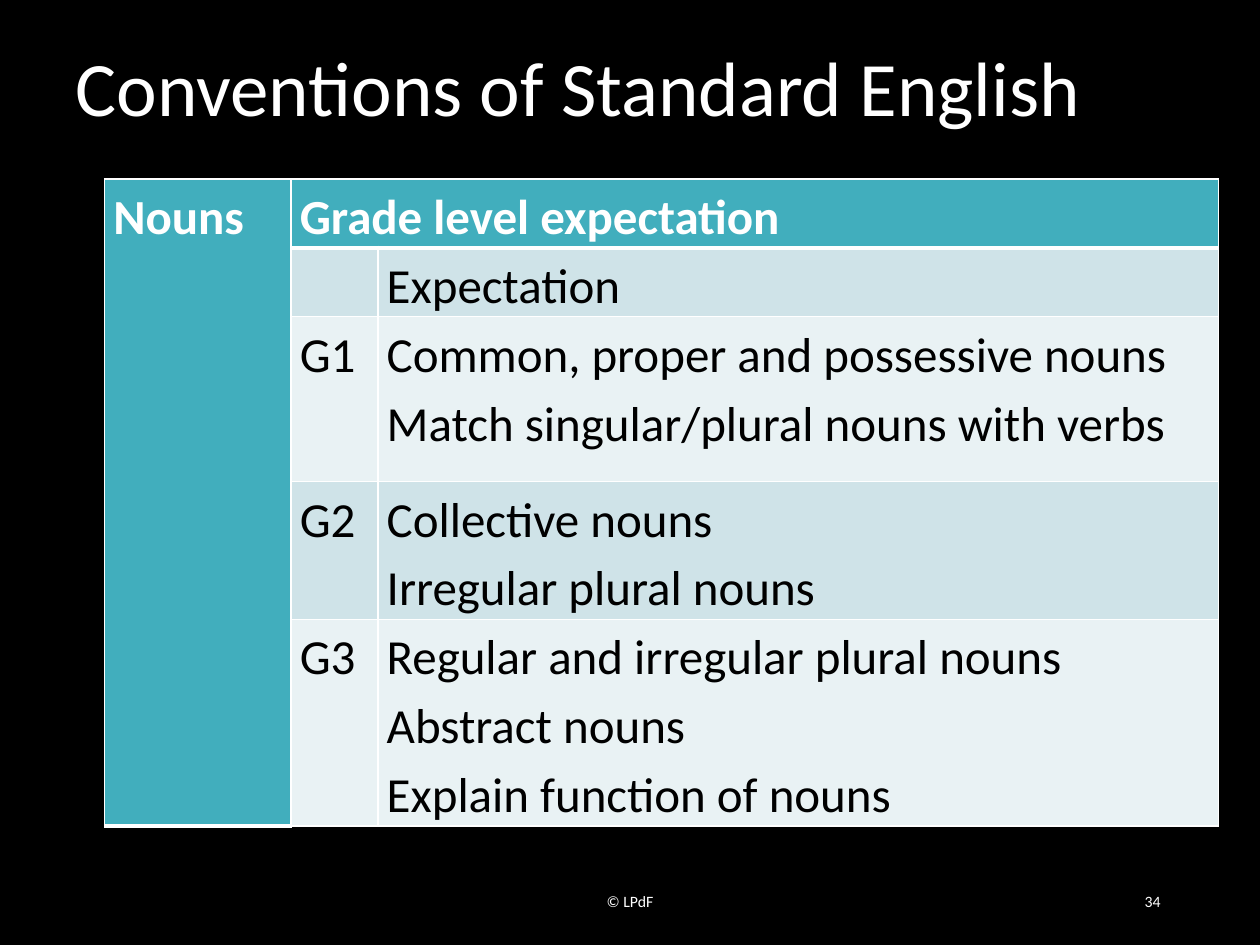
from pptx import Presentation
from pptx.dml.color import RGBColor
from pptx.enum.text import MSO_ANCHOR, PP_ALIGN
from pptx.oxml.ns import qn
from pptx.util import Inches, Pt
from lxml import etree

LEFT, CENTER, RIGHT = PP_ALIGN.LEFT, PP_ALIGN.CENTER, PP_ALIGN.RIGHT
MIDDLE = MSO_ANCHOR.MIDDLE

BLACK = RGBColor(0x00, 0x00, 0x00)
WHITE = RGBColor(0xFF, 0xFF, 0xFF)
TEAL = RGBColor(0x41, 0xAE, 0xBD)
BANDS = (RGBColor(0xE9, 0xF2, 0xF4), RGBColor(0xCF, 0xE3, 0xE8))

FONT = "Calibri"
COLUMN_WIDTHS = (1.48, 0.69, 6.67)
LINE_HEIGHT = 0.545
ROW_LINES = (1, 1, 2.4, 2, 3)
EXPECTATIONS = (
    ("", "Expectation"),
    ("G1", "Common, proper and possessive nouns\nMatch singular/plural nouns with verbs"),
    ("G2", "Collective nouns\nIrregular plural nouns"),
    ("G3", "Regular and irregular plural nouns\nAbstract nouns\nExplain function of nouns"),
)


def write_text(text_frame, text, size, color, bold=False, align=LEFT, spacing=1.0):
    text_frame.text = text
    for paragraph in text_frame.paragraphs:
        paragraph.alignment = align
        paragraph.line_spacing = spacing
        paragraph.font.name = FONT
        paragraph.font.size = Pt(size)
        paragraph.font.bold = bold
        paragraph.font.color.rgb = color


def set_borders(cell, top=1, bottom=1):
    """Draw white cell borders; widths are in points."""
    properties = cell._tc.get_or_add_tcPr()
    for side, width in (("L", 1), ("R", 1), ("T", top), ("B", bottom)):
        line = etree.SubElement(properties, qn(f"a:ln{side}"), w=str(Pt(width)))
        fill = etree.SubElement(line, qn("a:solidFill"))
        etree.SubElement(fill, qn("a:srgbClr"), val=str(WHITE))


def format_cell(cell, text, fill, color=BLACK, bold=False, top=1, bottom=1):
    cell.margin_left = cell.margin_right = Inches(0.07)
    cell.margin_top = cell.margin_bottom = 0
    set_borders(cell, top, bottom)
    cell.fill.solid()
    cell.fill.fore_color.rgb = fill
    if text:
        write_text(cell.text_frame, text, 28, color, bold, spacing=1.15)


def add_title(slide, text):
    title = slide.shapes.title
    title.left, title.top = Inches(0.5), 0
    title.width, title.height = Inches(8.62), Inches(1.45)
    title.text_frame.vertical_anchor = MIDDLE
    write_text(title.text_frame, text, 44, WHITE, spacing=0.9)


def add_noun_table(slide):
    heights = [Inches(lines * LINE_HEIGHT) for lines in ROW_LINES]
    table = slide.shapes.add_table(
        len(heights), len(COLUMN_WIDTHS), Inches(0.83), Inches(1.42),
        Inches(sum(COLUMN_WIDTHS)), sum(heights)).table
    table.first_row = table.horz_banding = False
    for column, width in zip(table.columns, COLUMN_WIDTHS):
        column.width = Inches(width)
    for row, height in zip(table.rows, heights):
        row.height = height

    last_row = len(heights) - 1
    table.cell(0, 0).merge(table.cell(last_row, 0))
    table.cell(0, 1).merge(table.cell(0, 2))
    format_cell(table.cell(0, 0), "Nouns", TEAL, WHITE, True, bottom=3)
    set_borders(table.cell(last_row, 0), bottom=3)
    format_cell(table.cell(0, 1), "Grade level expectation", TEAL, WHITE, True, bottom=3)
    set_borders(table.cell(0, 2), bottom=3)
    for row, texts in enumerate(EXPECTATIONS, start=1):
        for column, text in enumerate(texts, start=1):
            format_cell(table.cell(row, column), text, BANDS[row % 2],
                        top=3 if row == 1 else 1)


def add_footer_text(slide, text, left, width, align):
    box = slide.shapes.add_textbox(Inches(left), Inches(6.95), Inches(width), Inches(0.4))
    box.text_frame.word_wrap = True
    box.text_frame.vertical_anchor = MIDDLE
    write_text(box.text_frame, text, 9, WHITE, align=align)


def main():
    presentation = Presentation()
    presentation.slide_width = Inches(10)
    presentation.slide_height = Inches(7.5)
    slide = presentation.slides.add_slide(presentation.slide_layouts[5])
    slide.background.fill.solid()
    slide.background.fill.fore_color.rgb = BLACK

    add_title(slide, "Conventions of Standard English")
    add_noun_table(slide)
    add_footer_text(slide, "© LPdF", 3.31, 3.38, CENTER)
    add_footer_text(slide, "34", 7.06, 2.25, RIGHT)
    presentation.save("out.pptx")


if __name__ == "__main__":
    main()
